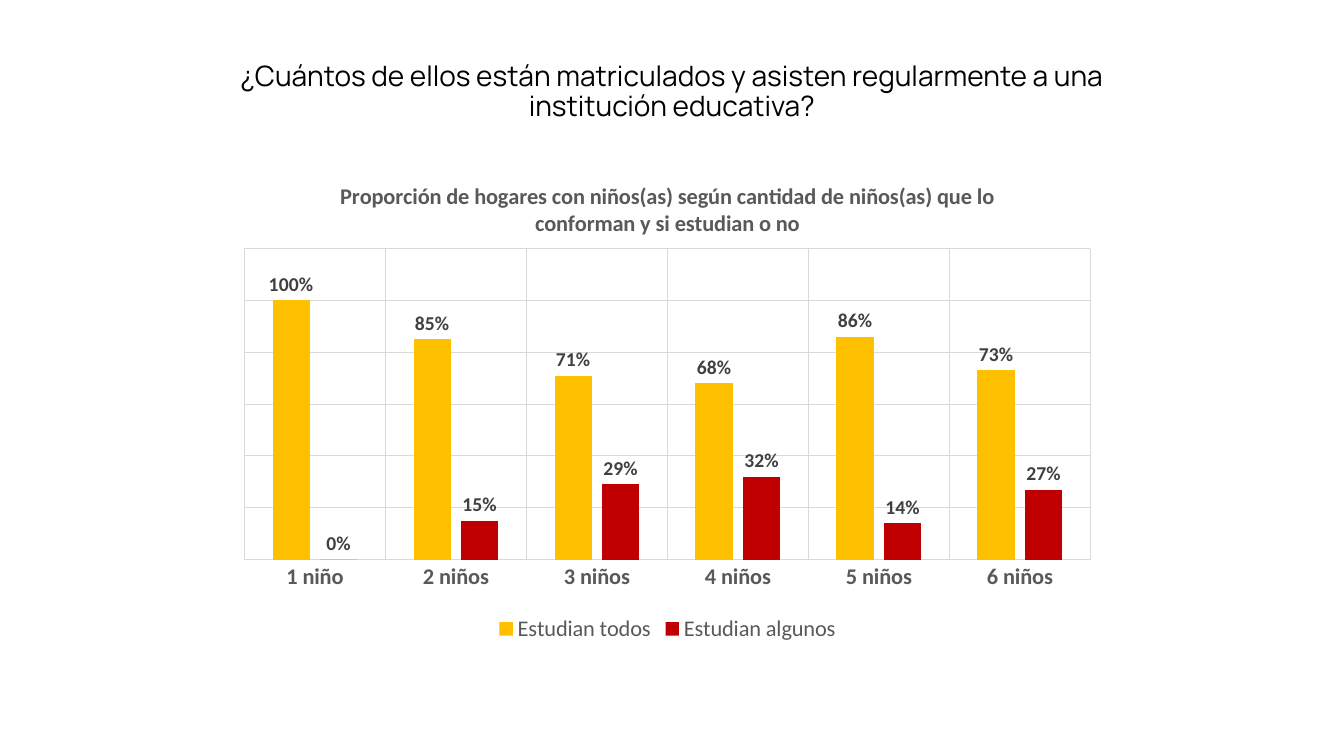
from lxml import etree
from pptx import Presentation
from pptx.chart.data import CategoryChartData
from pptx.dml.color import RGBColor
from pptx.enum.chart import XL_CHART_TYPE, XL_LABEL_POSITION, XL_LEGEND_POSITION, XL_TICK_MARK
from pptx.enum.text import MSO_ANCHOR, MSO_AUTO_SIZE, PP_ALIGN
from pptx.oxml.ns import qn
from pptx.util import Inches, Pt

COLUMNS = XL_CHART_TYPE.COLUMN_CLUSTERED
OUTSIDE = XL_LABEL_POSITION.OUTSIDE_END
BOTTOM = XL_LEGEND_POSITION.BOTTOM
NO_TICK = XL_TICK_MARK.NONE
MIDDLE = MSO_ANCHOR.MIDDLE
NO_FIT = MSO_AUTO_SIZE.NONE
CENTER = PP_ALIGN.CENTER

COLORS = {
    "question": "000000",
    "text": "595959",
    "label": "404040",
    "grid": "D9D9D9",
    "Estudian todos": "FFC000",
    "Estudian algunos": "C00000",
}
SHARES = {
    "Estudian todos": (1, 0.85, 0.71, 0.68, 0.86, 0.73),
    "Estudian algunos": (0, 0.15, 0.29, 0.32, 0.14, 0.27),
}
PERCENT = "###0%"
PLOT_AREA = {"x": 0.02, "y": 0.18, "w": 0.96, "h": 0.64}


def style_font(font, size, color, bold=False, name="Calibri"):
    font.name = name
    font.size = Pt(size)
    font.bold = bold
    font.color.rgb = RGBColor.from_string(COLORS[color])


def style_line(line):
    line.color.rgb = RGBColor.from_string(COLORS["grid"])
    line.width = Pt(0.75)


presentation = Presentation()
presentation.slide_width = Inches(13.33)
presentation.slide_height = Inches(7.5)
slide = presentation.slides.add_slide(presentation.slide_layouts[5])

question = slide.shapes.title
question.left, question.top = Inches(2.05), Inches(0.56)
question.width, question.height = Inches(9.23), Inches(0.71)
frame = question.text_frame
frame.word_wrap = True
frame.auto_size = NO_FIT
frame.vertical_anchor = MIDDLE
paragraph = frame.paragraphs[0]
paragraph.alignment = CENTER
paragraph.line_spacing = 0.9
run = paragraph.add_run()
run.text = "¿Cuántos de ellos están matriculados y asisten regularmente a una institución educativa?"
style_font(run.font, 20, "question", name="Manrope")

chart_data = CategoryChartData(number_format=PERCENT)
chart_data.categories = ["1 niño"] + [f"{count} niños" for count in range(2, 7)]
for name, values in SHARES.items():
    chart_data.add_series(name, values)
chart = slide.shapes.add_chart(
    COLUMNS, Inches(2.25), Inches(1.6), Inches(8.74), Inches(4.82), chart_data
).chart
style_font(chart.font, 10, "question")

chart.has_title = True
run = chart.chart_title.text_frame.paragraphs[0].add_run()
run.text = (
    "Proporción de hogares con niños(as) según cantidad de niños(as) "
    "que lo conforman y si estudian o no"
)
style_font(run.font, 16, "text", bold=True)
chart.chart_title.include_in_layout = False

chart.has_legend = True
chart.legend.position = BOTTOM
chart.legend.include_in_layout = False
style_font(chart.legend.font, 16, "text")

category_axis = chart.category_axis
category_axis.major_tick_mark = NO_TICK
category_axis.minor_tick_mark = NO_TICK
style_font(category_axis.tick_labels.font, 16, "text", bold=True)
style_line(category_axis.format.line)

value_axis = chart.value_axis
value_axis.visible = False
value_axis.minimum_scale = 0
value_axis.maximum_scale = 1.2
value_axis.major_unit = 0.2
for axis in (category_axis, value_axis):
    axis.has_major_gridlines = True
    style_line(axis.major_gridlines.format.line)

plot = chart.plots[0]
plot.gap_width = 150
plot.overlap = -27
plot.vary_by_categories = False
for series in plot.series:
    series.format.fill.solid()
    series.format.fill.fore_color.rgb = RGBColor.from_string(COLORS[series.name])
    series.invert_if_negative = False
    labels = series.data_labels
    labels.show_value = True
    labels.position = OUTSIDE
    labels.number_format = PERCENT
    labels.number_format_is_linked = False
    style_font(labels.font, 14, "label", bold=True)

plot_area = chart.element.find(".//" + qn("c:plotArea"))
layout = plot_area.find(qn("c:layout"))
if layout is None:
    layout = etree.Element(qn("c:layout"))
    plot_area.insert(0, layout)
manual = etree.SubElement(layout, qn("c:manualLayout"))
etree.SubElement(manual, qn("c:layoutTarget")).set("val", "inner")
for side in ("x", "y"):
    etree.SubElement(manual, qn(f"c:{side}Mode")).set("val", "edge")
for side, share in PLOT_AREA.items():
    etree.SubElement(manual, qn(f"c:{side}")).set("val", str(share))

presentation.save("out.pptx")
